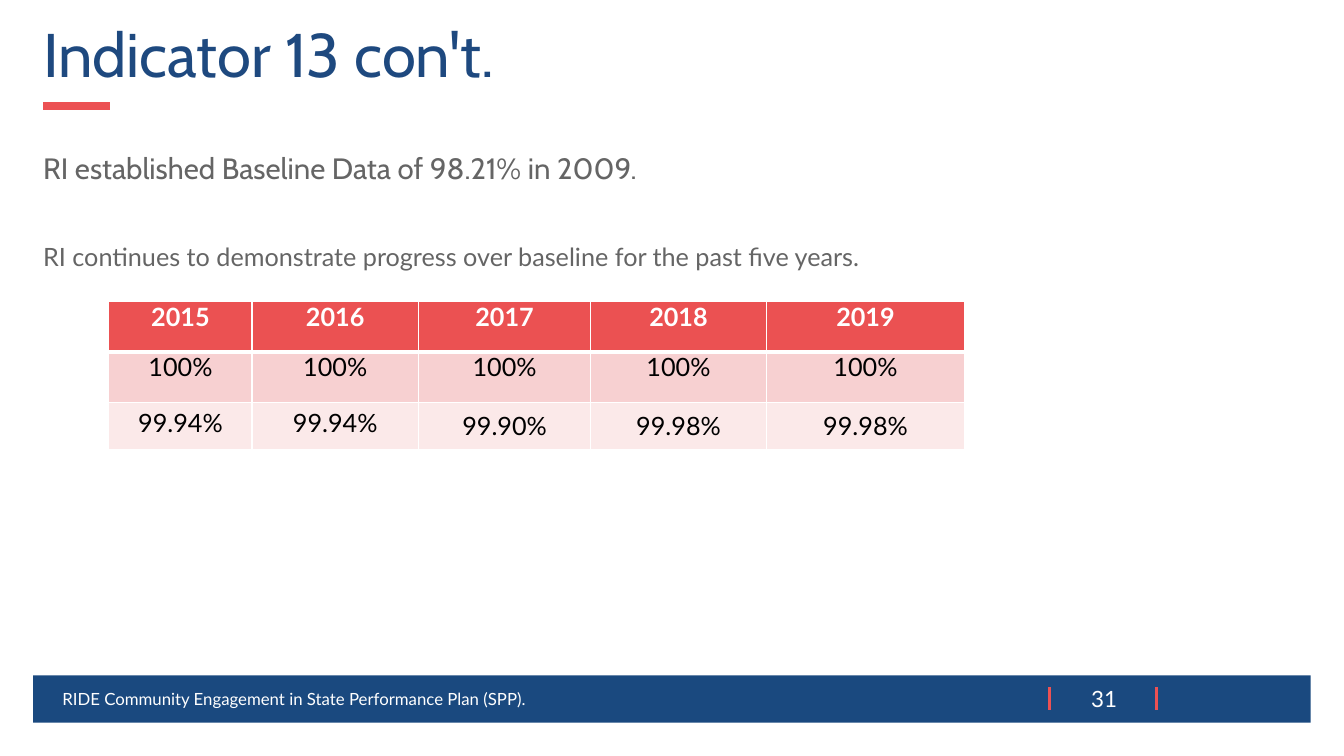
import pptx
import pptx.dml.color
import pptx.enum.shapes
import pptx.enum.text
import pptx.oxml
import pptx.oxml.ns
import pptx.util

PX = 9144  # 100 px to the inch
NAVY, TITLE_BLUE, GREY = "1A497F", "1E497F", "656565"
RULE_RED, HEADER_RED = "EC5153", "EB5152"
WHITE, BLACK = "FFFFFF", "000000"
ALIGN = pptx.enum.text.PP_ALIGN
ANCHOR = pptx.enum.text.MSO_ANCHOR

COLUMN_WIDTHS = [142, 165, 171, 174, 197]
ROW_HEIGHTS = [50, 50, 47]
ROW_FILLS = [HEADER_RED, "F7D0D1", "FBE9E9"]
RESULTS = [
    ["2015", "2016", "2017", "2018", "2019"],
    ["100%"] * 5,
    ["99.94%", "99.94%", "99.90%", "99.98%", "99.98%"],
]


def px(n):
    return pptx.util.Emu(n * PX)


def rgb(value):
    return pptx.dml.color.RGBColor.from_string(value)


def write(p, text, size, color, font="Lato", align=ALIGN.LEFT, bold=False):
    p.alignment = align
    r = p.add_run()
    r.text = text
    r.font.name = font
    r.font.size = pptx.util.Pt(size)
    r.font.bold = bold
    r.font.color.rgb = rgb(color)


def add_text(slide, box, text, size, color, font="Lato", align=ALIGN.LEFT,
             anchor=ANCHOR.TOP, spacing=1.0):
    tf = slide.shapes.add_textbox(*map(px, box)).text_frame
    tf.word_wrap = True
    tf.vertical_anchor = anchor
    p = tf.paragraphs[0]
    p.line_spacing = spacing
    write(p, text, size, color, font, align)


def add_rule(slide, x1, y1, x2, y2, width):
    line = slide.shapes.add_connector(
        pptx.enum.shapes.MSO_CONNECTOR.STRAIGHT, px(x1), px(y1), px(x2), px(y2))
    line.line.color.rgb = rgb(RULE_RED)
    line.line.width = pptx.util.Pt(width)
    pptx.oxml.ns.qn("a:effectLst")
    line._element.spPr.append(new_element("<a:effectLst %s/>"))


def new_element(xml):
    return pptx.oxml.parse_xml(xml % pptx.oxml.ns.nsdecls("a"))


def set_borders(cell, widths):
    """Draw white borders; widths holds points for left, right, top, bottom."""
    tc_pr = cell._tc.get_or_add_tcPr()
    for i, (side, width) in enumerate(zip("LRTB", widths)):
        tc_pr.insert(i, new_element(
            f'<a:ln{side} %s w="{width * 12700}"><a:solidFill>'
            f'<a:srgbClr val="{WHITE}"/></a:solidFill></a:ln{side}>'))


def add_heading(slide, box, text):
    x, y, w, h = box
    add_text(slide, box, text, 44, TITLE_BLUE, "Cabin", spacing=0.9)
    add_rule(slide, x + 10, y + 86, x + 76, y + 86, 6)


def add_body(slide, box):
    x, y, w, h = box
    add_text(slide, (x, y, w, 93),
             "RI established Baseline Data of 98.21% in 2009.",
             21, GREY, "Cabin", spacing=1.23)
    add_text(slide, (x, y + 92, w, h - 92),
             "RI continues to demonstrate progress over baseline "
             "for the past five years.", 18, GREY, spacing=1.23)


def add_results(slide, x, y):
    table = slide.shapes.add_table(
        len(RESULTS), len(COLUMN_WIDTHS), px(x), px(y),
        px(sum(COLUMN_WIDTHS)), px(sum(ROW_HEIGHTS))).table
    for column, width in zip(table.columns, COLUMN_WIDTHS):
        column.width = px(width)
    for i, values in enumerate(RESULTS):
        table.rows[i].height = px(ROW_HEIGHTS[i])
        header, last = i == 0, i == len(RESULTS) - 1
        for j, value in enumerate(values):
            cell = table.cell(i, j)
            cell.fill.solid()
            cell.fill.fore_color.rgb = rgb(ROW_FILLS[i])
            if not last:
                cell.margin_left = cell.margin_right = px(7)
                cell.margin_top = cell.margin_bottom = 0
            elif j >= 2:
                cell.vertical_anchor = ANCHOR.MIDDLE
            write(cell.text_frame.paragraphs[0], value, 18,
                  WHITE if header else BLACK, align=ALIGN.CENTER, bold=header)
            set_borders(cell, (1, 1, 3 if i == 1 else 1, 3 if header else 1))


def add_footer(slide, box, text, number):
    x, y, w, h = box
    bar = slide.shapes.add_shape(
        pptx.enum.shapes.MSO_SHAPE.RECTANGLE, *map(px, box))
    bar.shadow.inherit = False
    bar.fill.solid()
    bar.fill.fore_color.rgb = rgb(NAVY)
    bar.line.fill.background()
    for tick in (x + 1008, x + 1114):
        add_rule(slide, tick, y + 12, tick, y + 34, 2.25)
    add_text(slide, (x + 19, y + 3, 847, 40), text, 12, WHITE,
             anchor=ANCHOR.MIDDLE)
    add_text(slide, (x + 1030, y + 5, 64, 37), number, 16, WHITE,
             align=ALIGN.CENTER, anchor=ANCHOR.MIDDLE)


def main():
    prs = pptx.Presentation()
    prs.slide_width, prs.slide_height = px(1333), px(750)
    slide = prs.slides.add_slide(prs.slide_layouts[6])
    add_footer(slide, (33, 670, 1267, 47),
               "RIDE Community Engagement in State Performance Plan (SPP).", "31")
    add_heading(slide, (33, 19, 1267, 77), "Indicator 13 con't.")
    add_body(slide, (33, 136, 1267, 497))
    add_results(slide, 108, 299)
    prs.save("out.pptx")


if __name__ == "__main__":
    main()
